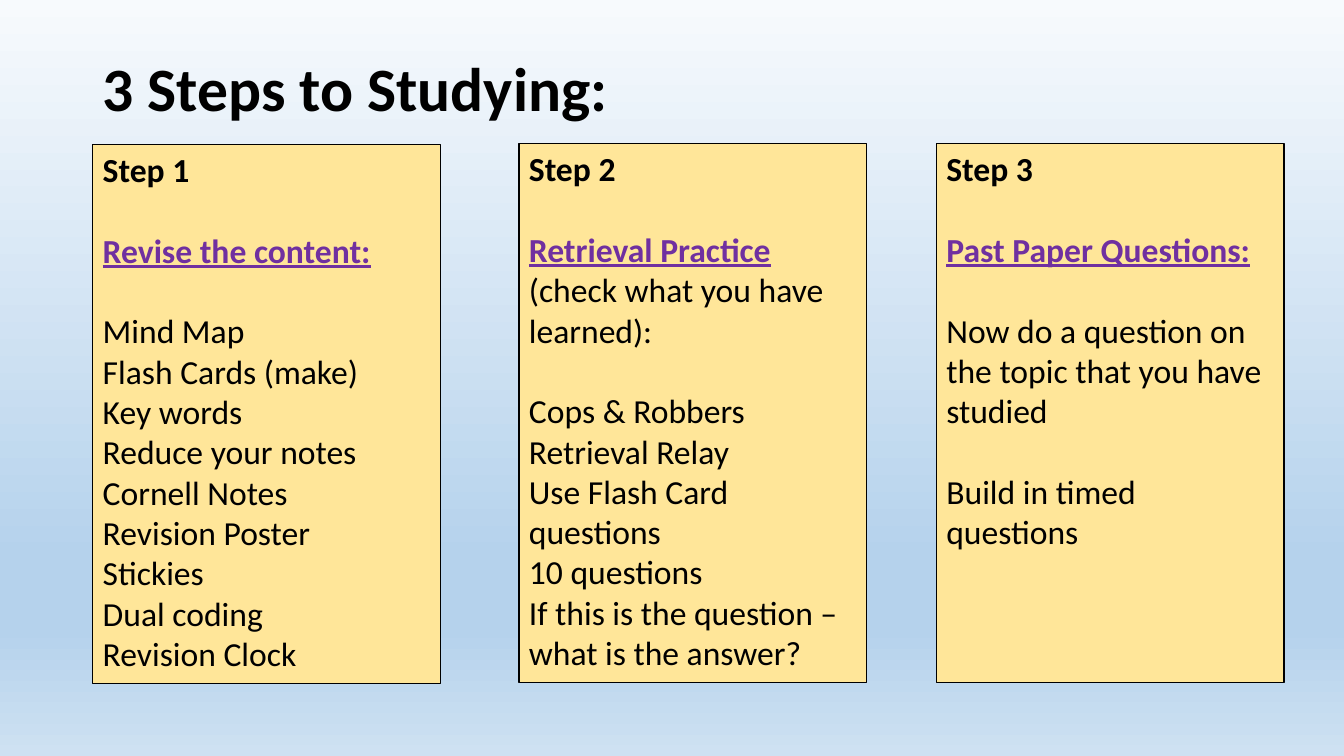
import pptx
import pptx.dml.color
import pptx.enum.shapes
import pptx.enum.text
import pptx.oxml.ns
import pptx.util
from lxml import etree

Cm, Pt = pptx.util.Cm, pptx.util.Pt
RGB = pptx.dml.color.RGBColor.from_string
ANCHOR = pptx.enum.text.MSO_ANCHOR
qn = pptx.oxml.ns.qn

# Content: each step has a heading, an optional remark, and groups of lines
TITLE = "3 Steps to Studying:"
STEPS = [
    ("Step 1", "Revise the content:", "",
     [["Mind Map", "Flash Cards (make)", "Key words", "Reduce your notes",
       "Cornell Notes", "Revision Poster", "Stickies", "Dual coding",
       "Revision Clock"]]),
    ("Step 2", "Retrieval Practice ", "(check what you have learned):",
     [["Cops & Robbers", "Retrieval Relay", "Use Flash Card questions",
       "10 questions", "If this is the question – what is the answer?"]]),
    ("Step 3", "Past Paper Questions:", "",
     [["Now do a question on the topic that you have studied"],
      ["Build in timed questions"]]),
]

THEME = {
    "font": "Calibri", "title": Pt(44), "body": Pt(24), "gap": Pt(28.8),
    "text": "000000", "heading": "7030A0", "box": "FFE699", "line": "000000",
    "background": [(0, "F7FAFD"), (74, "B5D2EC"), (83, "B5D2EC"), (100, "CEE1F2")],
}

# Layout
BOX_PLACES = [(Cm(2.34), Cm(3.63)), (Cm(13.08), Cm(3.61)), (Cm(23.6), Cm(3.61))]
BOX_W, BOX_H = Cm(8.76), Cm(13.59)


def add_run(p, text, size, bold=False, color=THEME["text"], underline=False):
    r = p.add_run()
    r.text = text
    r.font.name, r.font.size = THEME["font"], size
    r.font.bold, r.font.underline = bold, underline
    r.font.color.rgb = RGB(color)


def set_background(s):
    fill = s.background.fill
    fill.gradient()
    fill.gradient_angle = 270
    stops = s.element.find(".//" + qn("a:gsLst"))
    for stop in list(stops):
        stops.remove(stop)
    for percent, color in THEME["background"]:
        stop = etree.SubElement(stops, qn("a:gs"), pos=str(percent * 1000))
        etree.SubElement(stop, qn("a:srgbClr"), val=color)


def add_step(s, place, step):
    name, heading, remark, groups = step
    sp = s.shapes.add_shape(pptx.enum.shapes.MSO_SHAPE.RECTANGLE, *place, BOX_W, BOX_H)
    sp.shadow.inherit = False
    sp.fill.solid()
    sp.fill.fore_color.rgb = RGB(THEME["box"])
    sp.line.color.rgb = RGB(THEME["line"])
    sp.line.width = Pt(0.75)
    tf = sp.text_frame
    tf.word_wrap = True
    tf.vertical_anchor = ANCHOR.TOP

    def next_paragraph(p, gap):
        p.alignment = pptx.enum.text.PP_ALIGN.LEFT
        if gap:
            p.space_before = THEME["gap"]
        return p

    add_run(next_paragraph(tf.paragraphs[0], False), name, THEME["body"], bold=True)
    p = next_paragraph(tf.add_paragraph(), True)
    add_run(p, heading, THEME["body"], True, THEME["heading"], True)
    if remark:
        add_run(p, remark, THEME["body"])
    for group in groups:
        for i, line in enumerate(group):
            add_run(next_paragraph(tf.add_paragraph(), i == 0), line, THEME["body"])


def main():
    prs = pptx.Presentation()
    prs.slide_width, prs.slide_height = Cm(33.87), Cm(19.05)
    s = prs.slides.add_slide(prs.slide_layouts[6])
    set_background(s)

    # Title
    tf = s.shapes.add_textbox(Cm(2.34), Cm(0.48), Cm(15.6), Cm(3.68)).text_frame
    tf.word_wrap = True
    tf.vertical_anchor = ANCHOR.MIDDLE
    tf.paragraphs[0].line_spacing = 0.9
    add_run(tf.paragraphs[0], TITLE, THEME["title"], bold=True)

    # Step boxes
    for place, step in zip(BOX_PLACES, STEPS):
        add_step(s, place, step)

    prs.save("out.pptx")


if __name__ == "__main__":
    main()
